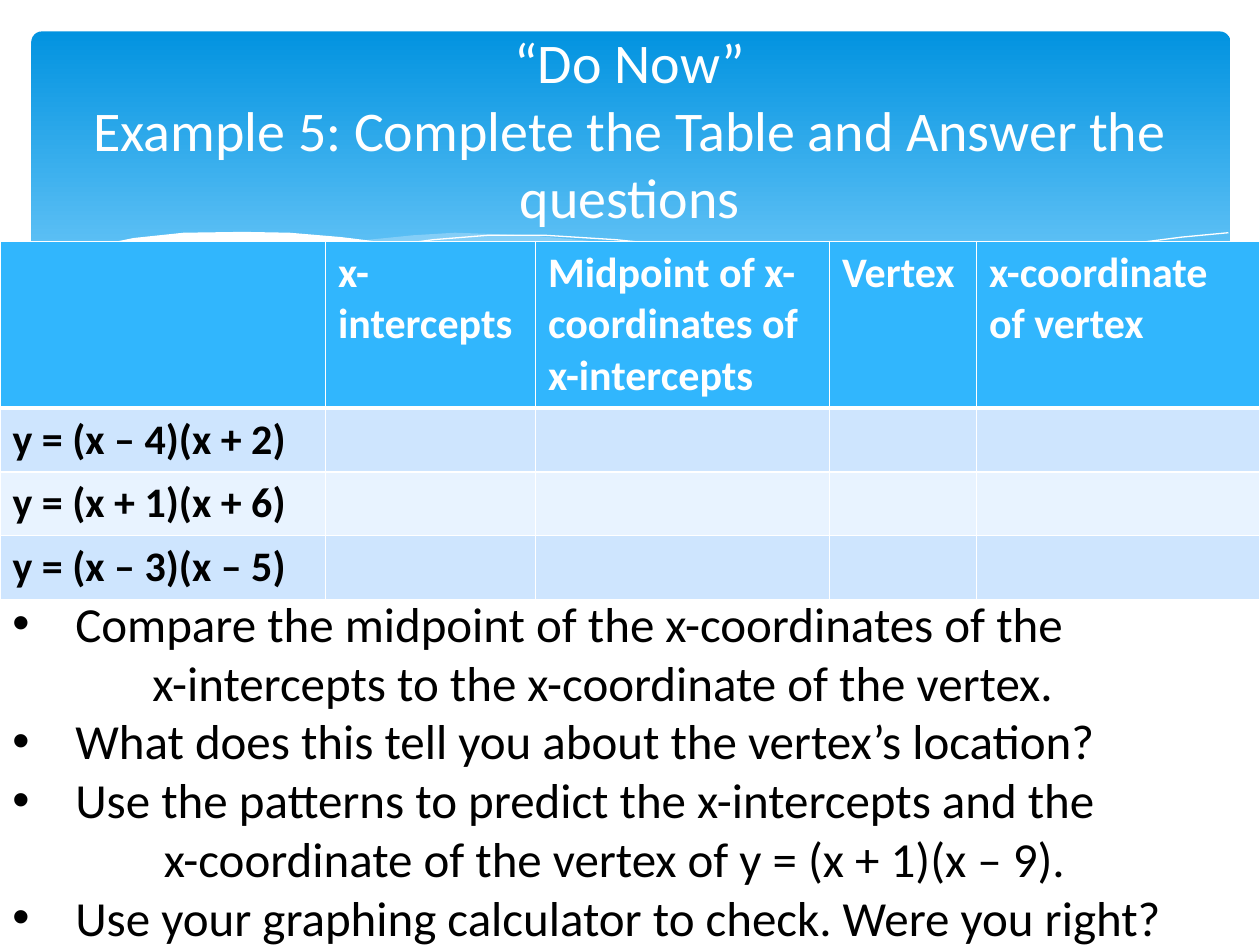
from lxml.etree import SubElement as Sub
from pptx import Presentation
from pptx.dml.color import RGBColor as RGB
from pptx.enum.shapes import MSO_SHAPE as Shape
from pptx.enum.text import MSO_ANCHOR as Anchor, MSO_AUTO_SIZE as Fit, PP_ALIGN as Align
from pptx.oxml.ns import qn
from pptx.util import Pt

# Content
TITLE = "“Do Now”\vExample 5: Complete the Table and Answer the questions"
HEADS = ["", "x-intercepts", "Midpoint of x-coordinates of x-intercepts",
         "Vertex", "x-coordinate of vertex"]
RULES = ["y = (x – 4)(x + 2)", "y = (x + 1)(x + 6)", "y = (x – 3)(x – 5)"]
# Left indent of a follow-on line, or None for a bullet
TASKS = [
    (None, "Compare the midpoint of the x-coordinates of the"),
    (80, "x-intercepts to the x-coordinate of the vertex."),
    (None, "What does this tell you about the vertex’s location?"),
    (None, "Use the patterns to predict the x-intercepts and the"),
    (86.5, "x-coordinate of the vertex of y = (x + 1)(x – 9)."),
    (None, "Use your graphing calculator to check. Were you right?"),
]
FONT = "Calibri"
COLORS = {"white": "FFFFFF", "black": "000000", "top": "0293E0", "low": "83D3FE",
          "wave": "C6E7FC", "head": "31B6FD", "odd": "CEE5FE", "even": "E8F3FF"}
WIDTHS = [186, 120, 168, 84, 162]
HEIGHTS = [95, 36.5, 36.5, 36.5]

# Banner waves: fill, opacity in percent, points (no fill means an open line)
WAVES = [
    ("wave", 29, [
        (702.7, 144), (673, 149), (620, 160.6), (561, 174), (476, 191), (508, 195),
        (545, 198.5), (578, 200), (615, 198.5), (651.5, 193.5), (678, 186.5), (702.7, 178)]),
    ("wave", 40, [
        (643, 196.5), (581, 187), (533.5, 178), (453, 160), (409.5, 150), (370, 142.5),
        (335, 137.5), (302.5, 134.5), (260, 133), (236, 134.5), (206, 137.5), (246, 143),
        (291, 152), (323, 160), (381.5, 173), (433, 183.5), (479, 191.5), (520, 197),
        (565, 200), (603.5, 200)]),
    (None, 100, [
        (222.5, 140.5), (247.5, 137), (278.5, 134.5), (312, 134.5), (352, 137), (400, 142),
        (458, 150), (500.5, 157.5), (547, 168), (598, 180.5), (653, 196)]),
    (None, 100, [
        (441.5, 185), (484, 173.5), (538.5, 160.5), (602, 147), (644.5, 139.5),
        (675.5, 135.5), (702, 133)]),
    ("white", 100, [
        (703.5, 177), (677, 186.5), (647, 193.5), (612, 198), (582.5, 199.5), (535.5, 197),
        (495.5, 193), (450.5, 186), (399.5, 176.5), (322, 158.5), (263, 145.5),
        (227.5, 139.5), (195, 135.5), (165.5, 133), (139, 132.5), (105, 133), (76.5, 136),
        (54.5, 140.5), (33, 146), (16.5, 153.5), (16.5, 237), (703.5, 237)]),
]


def color(name):
    return RGB.from_string(COLORS[name])


def paint(fill, name):
    fill.solid()
    fill.fore_color.rgb = color(name)


def style(para, size, name, bold=False):
    for run in para.runs:
        font = run.font
        font.name, font.size, font.bold = FONT, Pt(size), bold
        font.color.rgb = color(name)


def add_wave(shapes, name, alpha, points):
    spots = [(Pt(x), Pt(y)) for x, y in points]
    pen = shapes.build_freeform(*spots[0])
    pen.add_line_segments(spots[1:], close=name is not None)
    wave = pen.convert_to_shape()
    wave.shadow.inherit = False
    if name is None:
        wave.fill.background()
        paint(wave.line.fill, "white")
        wave.line.width = Pt(0)
        return
    paint(wave.fill, name)
    wave.line.fill.background()
    if alpha < 100:
        tint = wave.fill._xPr.find(".//" + qn("a:srgbClr"))
        Sub(tint, qn("a:alpha"), val=str(alpha * 1000))


def add_edges(cell, base):
    props = cell._tc.get_or_add_tcPr()
    for i, side in enumerate("LRTB"):
        width = base if side == "B" else 1
        edge = Sub(props, qn("a:ln" + side), w=str(Pt(width)))
        Sub(Sub(edge, qn("a:solidFill")), qn("a:srgbClr"), val=COLORS["white"])
        props.insert(i, edge)


def add_box(shapes, left, top, width, height):
    frame = shapes.add_textbox(Pt(left), Pt(top), Pt(width), Pt(height)).text_frame
    frame.word_wrap = True
    return frame


def main():
    deck = Presentation()
    deck.slide_width, deck.slide_height = Pt(720), Pt(540)
    shapes = deck.slides.add_slide(deck.slide_layouts[6]).shapes

    # Banner
    banner = shapes.add_shape(Shape.ROUNDED_RECTANGLE, Pt(18), Pt(18), Pt(685), Pt(194.5))
    banner.adjustments[0] = 0.03
    banner.shadow.inherit = False
    banner.line.fill.background()
    banner.fill.gradient()
    banner.fill.gradient_angle = 270
    for stop, place, name in zip(banner.fill.gradient_stops, (0, 0.9), ("top", "low")):
        stop.position = place
        stop.color.rgb = color(name)
    for wave in WAVES:
        add_wave(shapes, *wave)

    # Table
    rows = [HEADS] + [[rule] + [""] * (len(HEADS) - 1) for rule in RULES]
    grid = shapes.add_table(len(rows), len(HEADS), Pt(0), Pt(138),
                            Pt(sum(WIDTHS)), Pt(sum(HEIGHTS))).table
    for col, width in zip(grid.columns, WIDTHS):
        col.width = Pt(width)
    for r, row in enumerate(rows):
        grid.rows[r].height = Pt(HEIGHTS[r])
        shade = "head" if r == 0 else "odd" if r % 2 else "even"
        for c, text in enumerate(row):
            cell = grid.cell(r, c)
            cell.text_frame.text = text
            style(cell.text_frame.paragraphs[0], 24, "white" if r == 0 else "black", True)
            paint(cell.fill, shade)
            add_edges(cell, 3 if r == 0 else 1)

    # Title
    frame = add_box(shapes, 0, 21, 720, 105)
    frame.vertical_anchor = Anchor.MIDDLE
    frame.text = TITLE
    para = frame.paragraphs[0]
    para.alignment = Align.CENTER
    style(para, 32, "white")

    # Questions
    frame = add_box(shapes, 0, 335.5, 720, 211)
    frame.auto_size = Fit.SHAPE_TO_FIT_TEXT
    frame.text = "\n".join(text for _, text in TASKS)
    for para, (left, _) in zip(frame.paragraphs, TASKS):
        style(para, 28, "black")
        props = para._p.get_or_add_pPr()
        props.set("marL", str(Pt(left or 36)))
        props.set("indent", str(Pt(0 if left else -36)))
        if left:
            Sub(props, qn("a:buNone"))
        else:
            Sub(props, qn("a:buFont"), typeface="Arial")
            Sub(props, qn("a:buChar"), char="•")

    deck.save("out.pptx")


if __name__ == "__main__":
    main()
